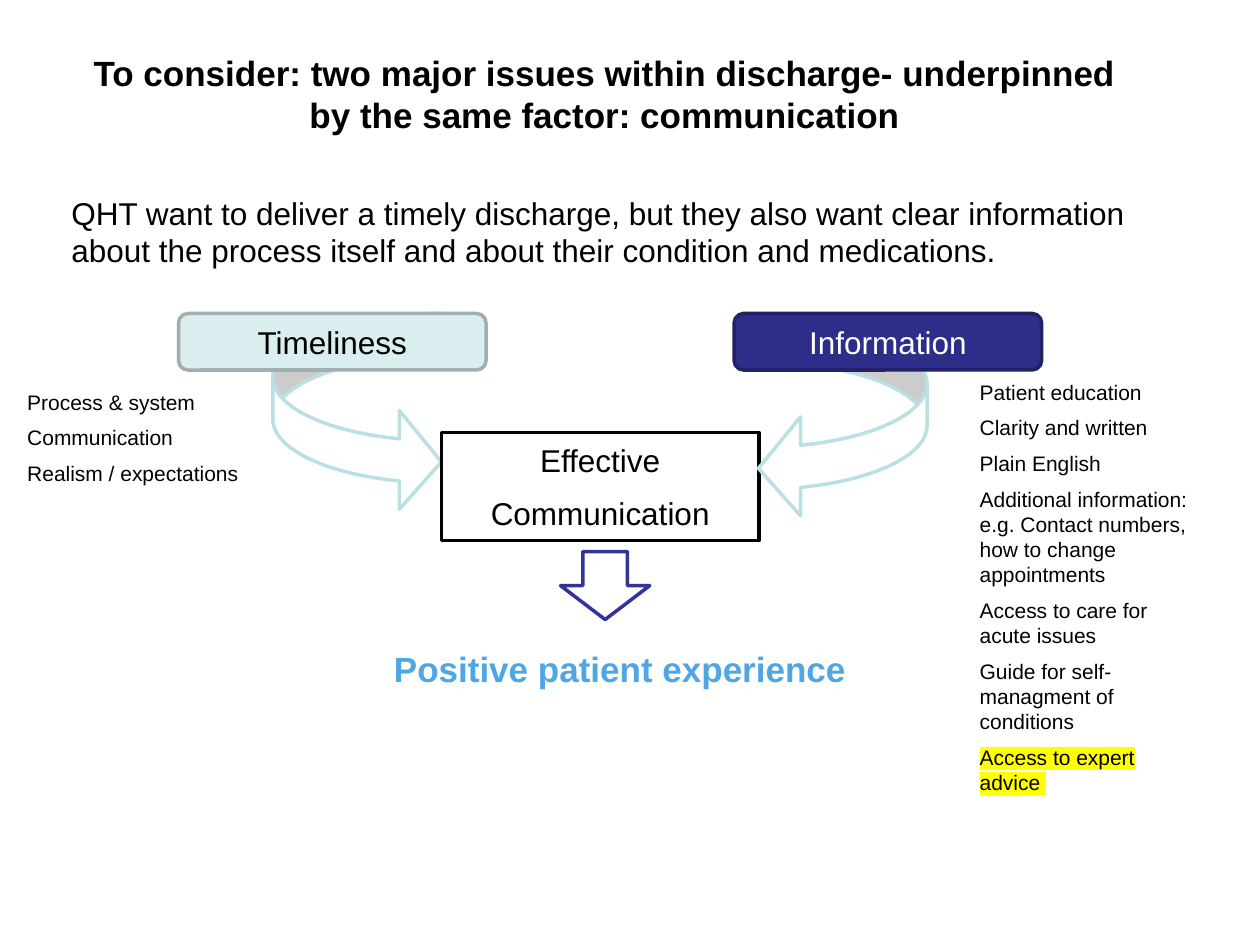
from dataclasses import dataclass

from lxml import etree
from pptx import Presentation
from pptx.dml.color import RGBColor
from pptx.enum.shapes import MSO_SHAPE
from pptx.enum.text import MSO_ANCHOR, PP_ALIGN
from pptx.oxml.ns import qn
from pptx.util import Cm, Pt

RECT = MSO_SHAPE.RECTANGLE
ROUNDED = MSO_SHAPE.ROUNDED_RECTANGLE
CURVED = MSO_SHAPE.CURVED_RIGHT_ARROW
DOWN = MSO_SHAPE.DOWN_ARROW
MIDDLE = MSO_ANCHOR.MIDDLE
LEFT = PP_ALIGN.LEFT
CENTER = PP_ALIGN.CENTER


@dataclass(frozen=True)
class Theme:
    font: str = "Arial"
    title: int = 20
    body: int = 18
    note: int = 12
    line: int = 2
    black: str = "000000"
    white: str = "FFFFFF"
    navy: str = "2D2D8A"
    navy_edge: str = "212166"
    indigo: str = "333399"
    mint: str = "DAEDEF"
    mint_edge: str = "A1AFB1"
    aqua: str = "BBE0E3"
    sky: str = "4FA6E3"
    marker: str = "FFFF00"


@dataclass(frozen=True)
class Box:
    x: float
    y: float
    w: float
    h: float

    def emu(self) -> tuple:
        return Cm(self.x), Cm(self.y), Cm(self.w), Cm(self.h)


@dataclass(frozen=True)
class Issue:
    name: str
    box: Box
    fill: str
    edge: str
    color: str


@dataclass(frozen=True)
class Curve:
    box: Box
    mirrored: bool


T = Theme()


def write(tf, *lines: str, size: int = T.body, color: str = T.black,
          bold: bool = False, align=LEFT, marked: str = "") -> None:
    tf.word_wrap = True
    for i, line in enumerate(lines):
        p = tf.paragraphs[0] if i == 0 else tf.add_paragraph()
        p.alignment = align
        p.space_before = Pt(size / 2 if i else 0)
        r = p.add_run()
        r.text = line
        r.font.name = T.font
        r.font.size = Pt(size)
        r.font.bold = bold
        r.font.color.rgb = RGBColor.from_string(color)
        if line == marked:
            highlight = etree.Element(qn("a:highlight"))
            etree.SubElement(highlight, qn("a:srgbClr"), val=T.marker)
            r.font.fill
            r._r.rPr.find(qn("a:solidFill")).addnext(highlight)


def add_text(slide, box: Box, *lines: str, **style) -> None:
    write(slide.shapes.add_textbox(*box.emu()).text_frame, *lines, **style)


def add_shape(slide, kind, box: Box, edge: str, fill: str = T.white):
    s = slide.shapes.add_shape(kind, *box.emu())
    s.shadow.inherit = False
    s.fill.solid()
    s.fill.fore_color.rgb = RGBColor.from_string(fill)
    s.line.color.rgb = RGBColor.from_string(edge)
    s.line.width = Pt(T.line)
    s.text_frame.vertical_anchor = MIDDLE
    return s


def add_curve(slide, curve: Curve) -> None:
    s = add_shape(slide, CURVED, curve.box, T.aqua)
    for i, value in enumerate((0.25, 0.588, 0.25)):
        s.adjustments[i] = value
    if curve.mirrored:
        s.element.spPr.xfrm.set("flipH", "1")


def add_issue(slide, issue: Issue) -> None:
    s = add_shape(slide, ROUNDED, issue.box, issue.edge, issue.fill)
    write(s.text_frame, issue.name, color=issue.color, align=CENTER)


CURVES = (
    Curve(Box(5.5, 6.32, 3.4, 3.99), False),
    Curve(Box(15.29, 6.45, 3.4, 3.99), True),
)
ISSUES = (
    Issue("Timeliness", Box(3.6, 6.32, 6.2, 1.14), T.mint, T.mint_edge, T.black),
    Issue("Information", Box(14.8, 6.32, 6.2, 1.14), T.navy, T.navy_edge, T.white),
)
EXPERT = "Access to expert advice "
TIMELINESS_NOTES = ("Process & system", "Communication", "Realism / expectations")
INFORMATION_NOTES = (
    "Patient education",
    "Clarity and written",
    "Plain English",
    "Additional information: e.g. Contact numbers, how to change appointments",
    "Access to care for acute issues",
    "Guide for self-managment of conditions",
    EXPERT,
)


def main() -> None:
    prs = Presentation()
    prs.slide_width, prs.slide_height = Cm(25.4), Cm(19.05)
    slide = prs.slides.add_slide(prs.slide_layouts[6])

    add_text(slide, Box(1.19, 0.91, 22, 1.96),
             "To consider: two major issues within discharge- underpinned "
             "by the same factor: communication",
             size=T.title, bold=True, align=CENTER)
    add_text(slide, Box(1.19, 3.78, 22.6, 1.8),
             "QHT want to deliver a timely discharge, but they also want clear "
             "information about the process itself and about their condition "
             "and medications.")
    add_text(slide, Box(19.5, 7.52, 4.8, 8.97), *INFORMATION_NOTES,
             size=T.note, marked=EXPERT)
    add_text(slide, Box(0.3, 7.72, 4.8, 2.31), *TIMELINESS_NOTES, size=T.note)

    add_curve(slide, CURVES[0])
    factor = add_shape(slide, RECT, Box(8.9, 8.72, 6.4, 2.18), T.black)
    write(factor.text_frame, "Effective", "Communication", align=CENTER)
    add_shape(slide, DOWN, Box(11.3, 11.12, 1.8, 1.37), T.indigo)
    add_text(slide, Box(6.1, 12.93, 12.8, 1.12), "Positive patient experience",
             size=T.title, color=T.sky, bold=True, align=CENTER)
    add_curve(slide, CURVES[1])
    for issue in ISSUES:
        add_issue(slide, issue)

    prs.save("out.pptx")


if __name__ == "__main__":
    main()
